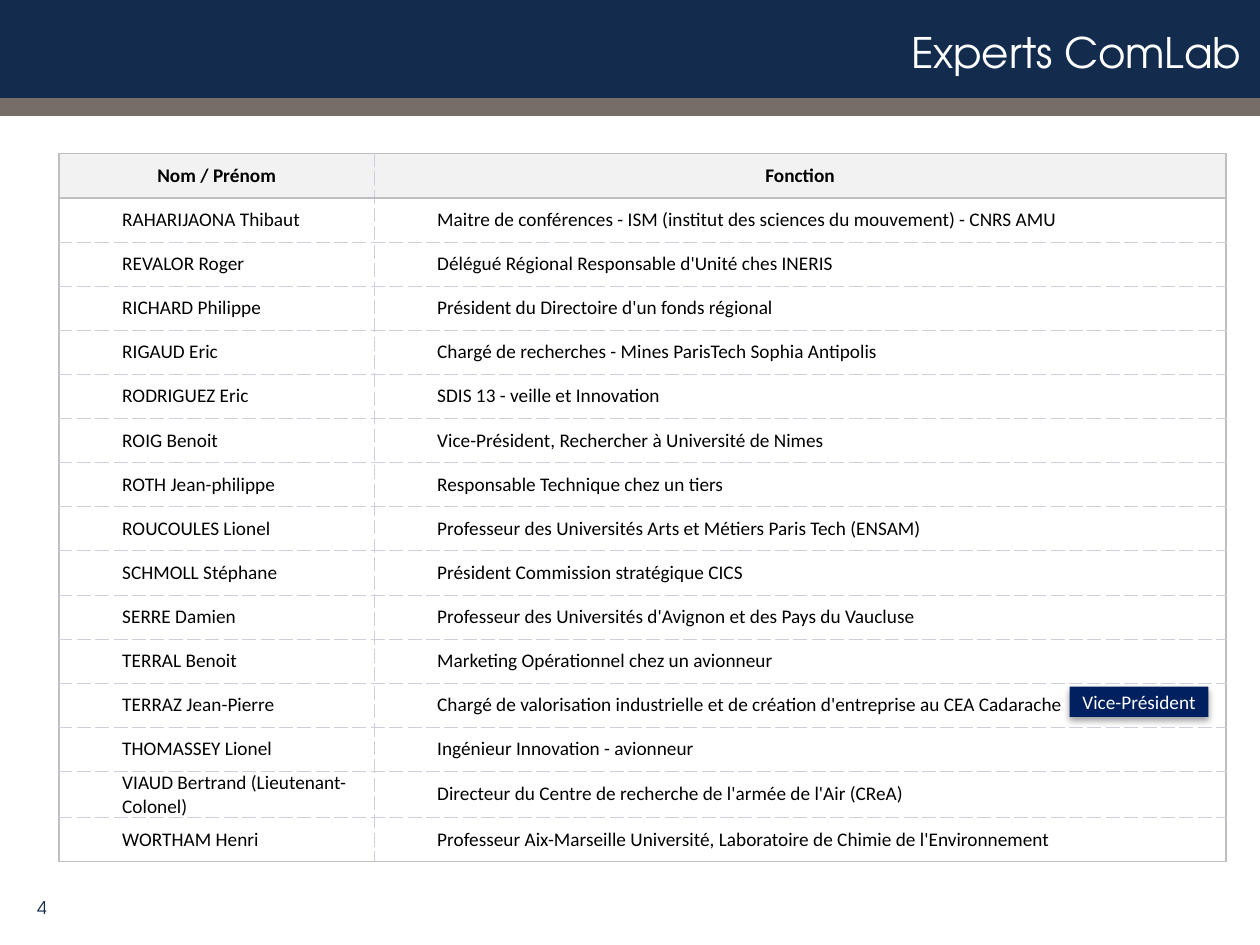
from lxml.etree import SubElement
from pptx import Presentation
from pptx.dml.color import RGBColor
from pptx.enum.shapes import MSO_SHAPE
from pptx.enum.text import MSO_ANCHOR, PP_ALIGN
from pptx.oxml.ns import qn
from pptx.util import Inches, Pt

TITLE = "Experts ComLab"
HEAD = ("Nom / Prénom", "Fonction")
EXPERTS = [
    ("RAHARIJAONA Thibaut", "Maitre de conférences - ISM (institut des sciences du mouvement) - CNRS AMU"),
    ("REVALOR Roger", "Délégué Régional Responsable d'Unité ches INERIS"),
    ("RICHARD Philippe", "Président du Directoire d'un fonds régional"),
    ("RIGAUD Eric", "Chargé de recherches - Mines ParisTech Sophia Antipolis"),
    ("RODRIGUEZ Eric", "SDIS 13 - veille et Innovation"),
    ("ROIG Benoit", "Vice-Président, Rechercher à Université de Nimes"),
    ("ROTH Jean-philippe", "Responsable Technique chez un tiers"),
    ("ROUCOULES Lionel", "Professeur des Universités Arts et Métiers Paris Tech (ENSAM)"),
    ("SCHMOLL Stéphane", "Président Commission stratégique CICS"),
    ("SERRE Damien", "Professeur des Universités d'Avignon et des Pays du Vaucluse"),
    ("TERRAL Benoit", "Marketing Opérationnel chez un avionneur"),
    ("TERRAZ Jean-Pierre", "Chargé de valorisation industrielle et de création d'entreprise au CEA Cadarache"),
    ("THOMASSEY Lionel", "Ingénieur Innovation - avionneur"),
    ("VIAUD Bertrand (Lieutenant-Colonel)", "Directeur du Centre de recherche de l'armée de l'Air (CReA)"),
    ("WORTHAM Henri", "Professeur Aix-Marseille Université, Laboratoire de Chimie de l'Environnement"),
]
BADGE = "Vice-Président"
COLORS = {
    "navy": "132C4D", "taupe": "766C68", "badge": "002060", "head": "F2F2F2",
    "solid": "BFBFBF", "dash": "CDCFDD", "black": "000000", "white": "FFFFFF",
}
BODY, DISPLAY = "Calibri", "TeX Gyre Adventor"
COLS = (2.5, 6.76)
ROW, TALL = 0.35, 0.36


def color(name):
    return RGBColor.from_string(COLORS[name])


def write(frame, text, size=11, face=BODY, ink="black", bold=False,
          align=PP_ALIGN.LEFT, indent=0, level=0, space=None):
    frame.word_wrap = True
    para = frame.paragraphs[0]
    para.alignment, para.level = align, level
    props = para._p.get_or_add_pPr()
    props.set("marL", str(Inches(indent)))
    props.set("indent", "0")
    run = para.add_run()
    run.text = text
    font = run.font
    font.size, font.name, font.bold = Pt(size), face, bold
    font.color.rgb = color(ink)
    if space is not None:
        run._r.get_or_add_rPr().set("spc", str(space))


def margins(item, size=0):
    item.margin_left = item.margin_right = Inches(size)
    item.margin_top = item.margin_bottom = 0


def block(slide, left, top, width, height, fill):
    shape = slide.shapes.add_shape(
        MSO_SHAPE.RECTANGLE, Inches(left), Inches(top), Inches(width), Inches(height))
    shape.shadow.inherit = False
    shape.fill.solid()
    shape.fill.fore_color.rgb = color(fill)
    shape.line.fill.background()
    return shape


def border(cell, side, solid):
    line = SubElement(cell._tc.get_or_add_tcPr(), qn("a:ln" + side),
                      w=str(Pt(1 if solid else 0.25)))
    paint = SubElement(line, qn("a:solidFill"))
    SubElement(paint, qn("a:srgbClr"), val=COLORS["solid" if solid else "dash"])
    SubElement(line, qn("a:prstDash"), val="solid" if solid else "sysDash")


def main():
    deck = Presentation()
    deck.slide_width, deck.slide_height = Inches(10), Inches(7.5)
    slide = deck.slides.add_slide(deck.slide_layouts[5])

    # Header bands
    block(slide, 0, 0, 10, 0.9, "navy")
    block(slide, 0, 0.78, 10, 0.14, "taupe")

    # Title, brought in front of the bands
    title = slide.shapes.title
    title.left, title.top = Inches(0.22), Inches(0.21)
    title.width, title.height = Inches(9.63), Inches(0.4)
    margins(title.text_frame)
    title.text_frame.vertical_anchor = MSO_ANCHOR.MIDDLE
    write(title.text_frame, TITLE, size=24, face=DISPLAY, ink="white",
          align=PP_ALIGN.RIGHT, indent=0.03, space=-10)
    slide.shapes._spTree.append(title._element)

    # Page number
    page = slide.shapes.add_textbox(Inches(-0.04), Inches(7), Inches(0.51), Inches(0.4))
    page.text_frame.vertical_anchor = MSO_ANCHOR.MIDDLE
    write(page.text_frame, "4", size=10, face=DISPLAY, ink="navy", align=PP_ALIGN.RIGHT)

    # Table of experts: solid frame and header, dashed inner lines
    rows = [HEAD] + EXPERTS
    last = len(rows) - 1
    table = slide.shapes.add_table(
        len(rows), len(COLS), Inches(0.47), Inches(1.22),
        Inches(sum(COLS)), Inches(ROW * len(rows))).table
    table.horz_banding = False
    for c, width in enumerate(COLS):
        table.columns[c].width = Inches(width)
    for r, row in enumerate(rows):
        table.rows[r].height = Inches(TALL if r == last - 1 else ROW)
        for c, text in enumerate(row):
            cell = table.cell(r, c)
            margins(cell)
            cell.vertical_anchor = MSO_ANCHOR.MIDDLE
            for side, solid in (("L", c == 0), ("R", c == 1),
                                ("T", r < 2), ("B", r in (0, last))):
                border(cell, side, solid)
            if r == 0:
                cell.fill.solid()
                cell.fill.fore_color.rgb = color("head")
                write(cell.text_frame, text, bold=True, align=PP_ALIGN.CENTER)
            else:
                cell.fill.background()
                write(cell.text_frame, text, indent=0.5, level=1)

    # Badge with a soft shadow
    badge = block(slide, 8.49, 5.45, 1.1, 0.24, "badge")
    badge.text_frame.vertical_anchor = MSO_ANCHOR.MIDDLE
    write(badge.text_frame, BADGE, ink="white", align=PP_ALIGN.CENTER)
    effects = badge._element.spPr.find(qn("a:effectLst"))
    shade = SubElement(effects, qn("a:outerShdw"), blurRad=str(Pt(4)),
                       dist=str(Pt(2)), dir="5400000", rotWithShape="0")
    tint = SubElement(shade, qn("a:srgbClr"), val=COLORS["black"])
    SubElement(tint, qn("a:alpha"), val="38000")

    deck.save("out.pptx")


if __name__ == "__main__":
    main()
